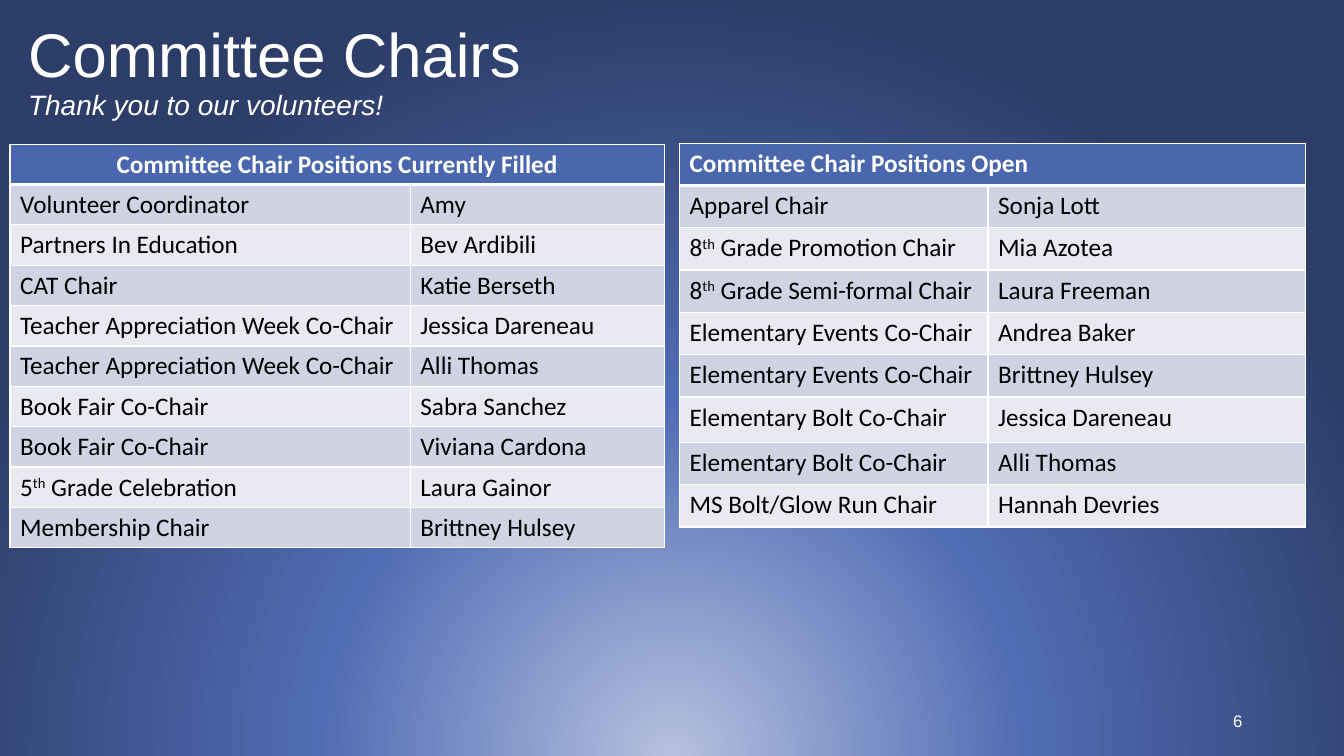
"""Build the committee chairs slide with its two volunteer tables."""
from lxml import etree
from pptx import Presentation
from pptx.dml.color import RGBColor
from pptx.enum.text import MSO_ANCHOR, PP_ALIGN
from pptx.oxml import parse_xml
from pptx.oxml.ns import nsdecls, qn
from pptx.util import Inches, Pt

LEFT, CENTER, RIGHT = PP_ALIGN.LEFT, PP_ALIGN.CENTER, PP_ALIGN.RIGHT
MIDDLE = MSO_ANCHOR.MIDDLE

COLORS = {"white": "FFFFFF", "black": "000000", "header": "4A66AC",
          "odd": "D0D3E3", "even": "E9EAF1"}
BACKGROUND = [(0, "B5C1DF"), (46, "506CB4"), (100, "2C3D67")]

TITLE = "Committee Chairs"
SUBTITLE = "Thank you to our volunteers!"
PAGE = "6"

TABLES = [
    {"header": "Committee Chair Positions Currently Filled", "align": CENTER,
     "at": (0.1, 1.43), "cols": (3.97, 2.52), "row": 0.4, "taller": {},
     "rows": [
         ("Volunteer Coordinator", "Amy"),
         ("Partners In Education", "Bev Ardibili"),
         ("CAT Chair", "Katie Berseth"),
         ("Teacher Appreciation Week Co-Chair", "Jessica Dareneau"),
         ("Teacher Appreciation Week Co-Chair", "Alli Thomas"),
         ("Book Fair Co-Chair", "Sabra Sanchez"),
         ("Book Fair Co-Chair", "Viviana Cardona"),
         ("5^th^ Grade Celebration", "Laura Gainor"),
         ("Membership Chair", "Brittney Hulsey")]},
    {"header": "Committee Chair Positions Open", "align": LEFT,
     "at": (6.74, 1.42), "cols": (3.06, 3.15), "row": 0.42, "taller": {6: 0.45},
     "rows": [
         ("Apparel Chair", "Sonja Lott"),
         ("8^th^ Grade Promotion Chair", "Mia Azotea"),
         ("8^th^ Grade Semi-formal Chair", "Laura Freeman"),
         ("Elementary Events Co-Chair", "Andrea Baker"),
         ("Elementary Events Co-Chair", "Brittney Hulsey"),
         ("Elementary Bolt Co-Chair", "Jessica Dareneau"),
         ("Elementary Bolt Co-Chair", "Alli Thomas"),
         ("MS Bolt/Glow Run Chair", "Hannah Devries")]},
]


def rgb(name):
    return RGBColor.from_string(COLORS[name])


def style(r, size, font, color, bold=False, italic=False):
    r.font.size, r.font.name = Pt(size), font
    r.font.bold, r.font.italic = bold, italic
    r.font.color.rgb = rgb(color)


def paint_background(s):
    fill = s.background.fill
    fill.gradient()
    grad = s.element.find(".//" + qn("a:gradFill"))
    stops = "".join(f'<a:gs pos="{pos * 1000}"><a:srgbClr val="{color}"/></a:gs>'
                    for pos, color in BACKGROUND)
    grad.getparent().replace(grad, parse_xml(
        f'<a:gradFill {nsdecls("a")} rotWithShape="1"><a:gsLst>{stops}</a:gsLst>'
        '<a:path path="circle"><a:fillToRect l="50000" t="130000" r="50000" '
        'b="-30000"/></a:path></a:gradFill>'))


def add_text(s, box, text, align):
    tf = s.shapes.add_textbox(*map(Inches, box)).text_frame
    tf.word_wrap, tf.vertical_anchor = True, MIDDLE
    p = tf.paragraphs[0]
    p.text, p.alignment = text, align
    return p


def set_borders(cell, row):
    widths = {"L": 1, "R": 1, "T": 3 if row == 1 else 1, "B": 3 if row == 0 else 1}
    tc_pr = cell._tc.get_or_add_tcPr()
    for side, width in widths.items():
        ln = etree.SubElement(tc_pr, qn(f"a:ln{side}"), w=str(Pt(width)))
        solid = etree.SubElement(ln, qn("a:solidFill"))
        etree.SubElement(solid, qn("a:srgbClr"), val=COLORS["white"])


def fill_cell(cell, text, row, align):
    set_borders(cell, row)
    cell.fill.solid()
    cell.fill.fore_color.rgb = rgb("header" if row == 0 else "odd" if row % 2 else "even")
    p = cell.text_frame.paragraphs[0]
    p.alignment = align
    for i, part in enumerate(text.split("^") if text else []):
        r = p.add_run()
        r.text = part
        style(r, 18, "Calibri", "black" if row else "white", bold=row == 0)
        if i % 2:
            r.font._element.set("baseline", "30000")


def add_chairs_table(s, spec):
    rows = [(spec["header"], "")] + spec["rows"]
    heights = [spec["taller"].get(i, spec["row"]) for i in range(len(rows))]
    size = sum(spec["cols"]), sum(heights)
    table = s.shapes.add_table(len(rows), 2, *map(Inches, spec["at"] + size)).table
    for col, width in zip(table.columns, spec["cols"]):
        col.width = Inches(width)
    for i, (values, height) in enumerate(zip(rows, heights)):
        table.rows[i].height = Inches(height)
        for j, text in enumerate(values):
            fill_cell(table.cell(i, j), text, i, LEFT if i else spec["align"])
    table.cell(0, 0).merge(table.cell(0, 1))


def main():
    prs = Presentation()
    prs.slide_width, prs.slide_height = Inches(13.33), Inches(7.5)
    s = prs.slides.add_slide(prs.slide_layouts[6])
    paint_background(s)

    p = add_text(s, (0.18, 0, 11.5, 1.45), f"{TITLE}\v{SUBTITLE}", LEFT)
    p.line_spacing = 0.9
    style(p.runs[0], 44, "Arial", "white")
    style(p.runs[1], 20, "Arial", "white", italic=True)

    for spec in TABLES:
        add_chairs_table(s, spec)

    p = add_text(s, (9.42, 6.95, 3, 0.4), PAGE, RIGHT)
    style(p.runs[0], 12, "Arial", "white")
    prs.save("out.pptx")


if __name__ == "__main__":
    main()
